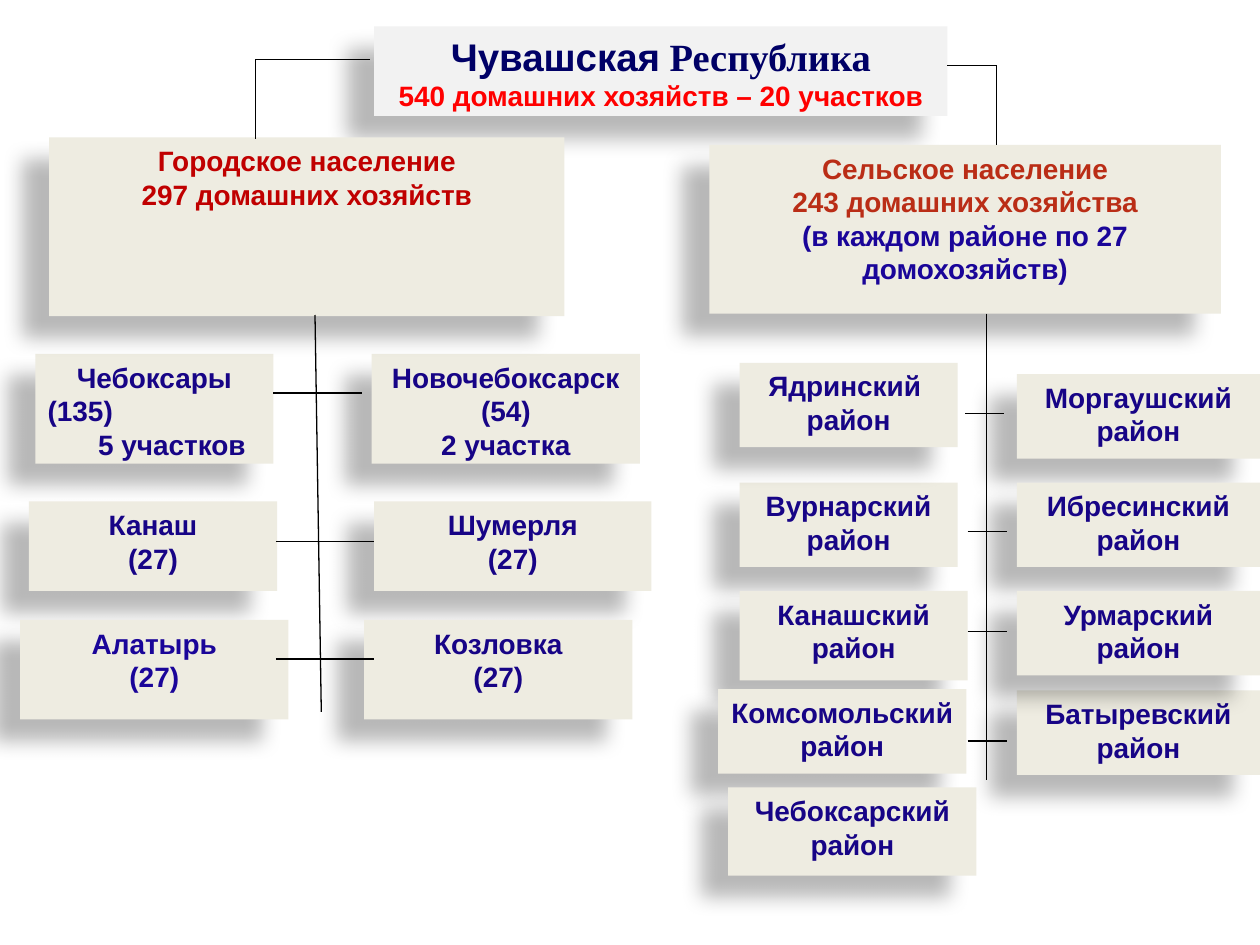
from dataclasses import dataclass
from typing import NamedTuple

from lxml.etree import SubElement
from pptx import Presentation
from pptx.dml.color import RGBColor
from pptx.enum.shapes import MSO_CONNECTOR, MSO_SHAPE
from pptx.enum.text import MSO_ANCHOR, PP_ALIGN
from pptx.oxml.ns import qn
from pptx.util import Inches, Pt

NAVY = "170486"
BLUE = "1A0599"
RED = "C00000"
BRICK = "BA2D16"
BEIGE = "EEECE1"


class Para(NamedTuple):
    text: str
    color: str = NAVY
    align: PP_ALIGN = PP_ALIGN.CENTER
    margin: float = 0


@dataclass
class Box:
    left: float
    top: float
    width: float
    height: float
    paras: list[Para]


class Line(NamedTuple):
    x1: float
    y1: float
    x2: float
    y2: float


def rgb(color: str) -> RGBColor:
    return RGBColor.from_string(color)


def town(left: float, top: float, width: float, height: float, *texts: str, color: str = NAVY) -> Box:
    return Box(left, top, width, height, [Para(text, color) for text in texts])


def district(left: float, top: float, width: float, name: str, height: float = 0.67) -> Box:
    return town(left, top, width, height, f"{name} район")


def add_shadow(sp) -> None:
    effects = SubElement(sp._element.spPr, qn("a:effectLst"))
    shadow = SubElement(effects, qn("a:outerShdw"), blurRad=str(Pt(11.8)), dist=str(Pt(19.7)),
                        dir=str(141 * 60000), algn="ctr", rotWithShape="0")
    color = SubElement(shadow, qn("a:srgbClr"), val="000000")
    SubElement(color, qn("a:alpha"), val="28000")


def style_box(sp, fill: str):
    sp.fill.solid()
    sp.fill.fore_color.rgb = rgb(fill)
    sp.line.fill.background()
    add_shadow(sp)
    tf = sp.text_frame
    tf.word_wrap = True
    tf.vertical_anchor = MSO_ANCHOR.TOP
    return tf


def set_font(font, size: float, color: str, name: str = "Arial") -> None:
    font.name = name
    font.size = Pt(size)
    font.bold = True
    font.color.rgb = rgb(color)


def draw_box(s, box: Box) -> None:
    sp = s.shapes.add_shape(MSO_SHAPE.RECTANGLE, Inches(box.left), Inches(box.top),
                            Inches(box.width), Inches(box.height))
    tf = style_box(sp, BEIGE)
    for i, para in enumerate(box.paras):
        p = tf.add_paragraph() if i else tf.paragraphs[0]
        p.text = para.text
        p.alignment = para.align
        set_font(p.font, 16, para.color)
        if para.margin:
            p._p.get_or_add_pPr().set("marL", str(Inches(para.margin)))


def draw_line(s, line: Line) -> None:
    c = s.shapes.add_connector(MSO_CONNECTOR.STRAIGHT, *(Inches(v) for v in line))
    c.line.color.rgb = rgb("000000")
    c.line.width = Pt(0.75)
    SubElement(c._element.spPr, qn("a:effectLst"))


def draw_title(s) -> None:
    sp = s.shapes.title
    sp.left, sp.top, sp.width, sp.height = (Inches(v) for v in (2.97, 0.21, 4.55, 0.71))
    tf = style_box(sp, "F2F2F2")
    p = tf.paragraphs[0]
    p.alignment = PP_ALIGN.CENTER
    for text, name in (("Чувашская", "Arial"), (" Республика", "Times New Roman")):
        r = p.add_run()
        r.text = text
        set_font(r.font, 22, "000066", name)
    p = tf.add_paragraph()
    p.text = "540 домашних хозяйств – 20 участков"
    p.alignment = PP_ALIGN.CENTER
    set_font(p.font, 16, "FF0000")


BOXES = [
    Box(0.28, 2.81, 1.89, 0.87, [
        Para("Чебоксары"),
        Para("(135)", align=PP_ALIGN.LEFT),
        Para("5 участков", margin=0.28),
    ]),
    district(8.07, 5.48, 1.93, "Батыревский"),
    district(5.87, 3.83, 1.73, "Вурнарский"),
    town(5.87, 2.88, 1.73, 0.67, "Ядринский ", "район"),
    district(8.07, 2.97, 1.93, "Моргаушский"),
    town(2.95, 2.81, 2.13, 0.87, "Новочебоксарск", "(54)", "2 участка"),
    town(0.39, 1.09, 4.09, 1.42, "Городское население", "297 домашних хозяйств", color=RED),
    town(0.23, 3.98, 1.97, 0.71, "Канаш", "(27)"),
    town(2.97, 3.98, 2.2, 0.71, "Шумерля", "(27)"),
    town(8.07, 3.83, 1.93, 0.67, "Ибресинский", "район"),
    district(5.87, 4.69, 1.81, "Канашский", 0.71),
    district(8.07, 4.69, 1.93, "Урмарский"),
    Box(5.63, 1.15, 4.06, 1.34, [
        Para("Сельское население", BRICK),
        Para("243 домашних хозяйства", BRICK),
        Para("(в каждом районе по 27 домохозяйств)", BLUE),
    ]),
    town(0.16, 4.92, 2.13, 0.79, "Алатырь", "(27)", color=BLUE),
    town(2.89, 4.92, 2.13, 0.79, "Козловка", "(27)"),
    district(5.7, 5.47, 1.97, "Комсомольский"),
    district(5.78, 6.25, 1.97, "Чебоксарский", 0.7),
]

LINES = [
    Line(2.5, 2.5, 2.55, 5.65),
    Line(7.83, 2.49, 7.83, 6.19),
    Line(7.52, 0.52, 7.91, 0.52),
    Line(7.91, 0.52, 7.91, 1.15),
    Line(2.03, 0.47, 2.94, 0.47),
    Line(2.03, 0.47, 2.03, 1.1),
    Line(2.17, 3.12, 2.87, 3.12),
    Line(7.66, 3.28, 7.97, 3.28),
    *(Line(2.19, y, 2.97, y) for y in (4.3, 5.23)),
    *(Line(7.68, y, 7.99, y) for y in (4.22, 5.01, 5.88)),
]


def main() -> None:
    prs = Presentation()
    prs.slide_width, prs.slide_height = Inches(10), Inches(7.5)
    s = prs.slides.add_slide(prs.slide_layouts[5])
    draw_title(s)
    for box in BOXES:
        draw_box(s, box)
    for line in LINES:
        draw_line(s, line)
    prs.save("out.pptx")


if __name__ == "__main__":
    main()
